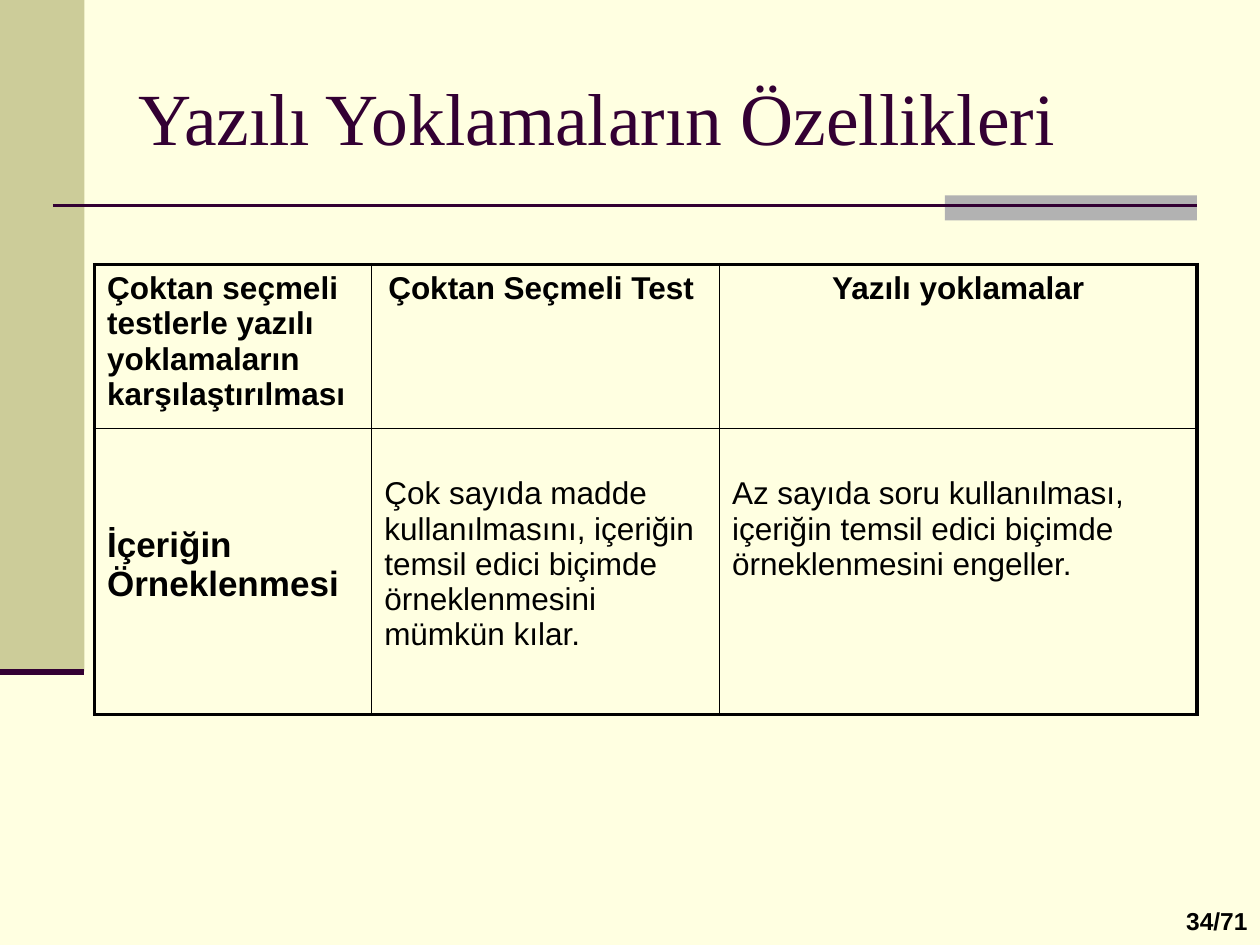
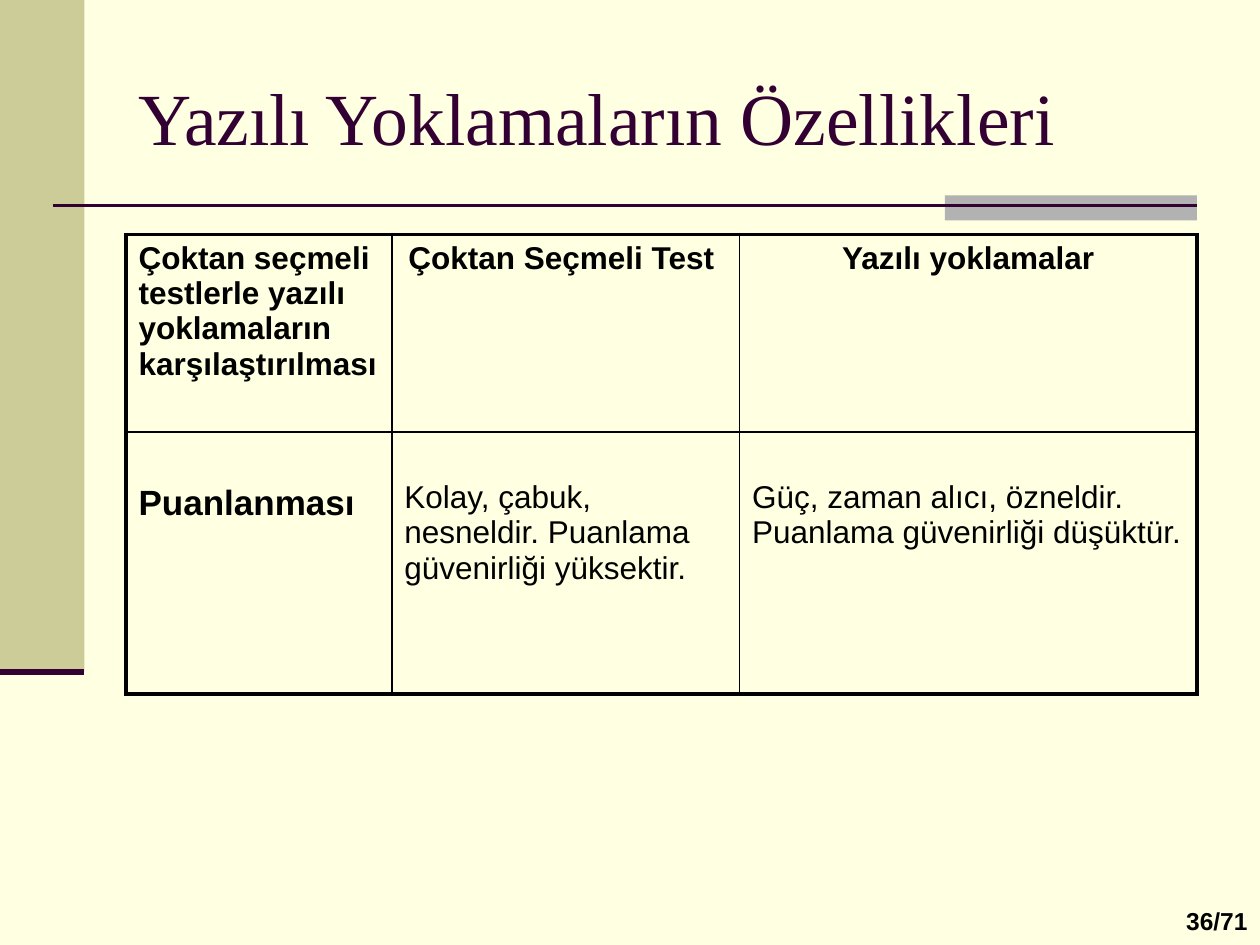
from dataclasses import dataclass

from lxml import etree
from pptx import Presentation
from pptx import util as u
from pptx.dml.color import RGBColor
from pptx.enum import shapes, text
from pptx.oxml import ns


@dataclass(frozen=True)
class Theme:
    background: str = "FFFFE1"
    band: str = "CCCC99"
    accent: str = "B2B2B2"
    plum: str = "330033"
    ink: str = "000000"
    serif: str = "Times New Roman"
    sans: str = "Arial"
    title_size: int = 42
    topic_size: int = 20
    body_size: int = 18
    page_size: int = 14
    outer_border: float = 2.25
    inner_border: float = 1


T = Theme()
TITLE = "Yazılı Yoklamaların Özellikleri"
HEADERS = (
    "Çoktan seçmeli testlerle yazılı yoklamaların karşılaştırılması",
    "Çoktan Seçmeli Test ",
    "Yazılı yoklamalar",
)
PAGE_COUNT = 71
CELL_INSET = 0.05
BODY_DROP = 0.38

SLIDES = (
    dict(
        page=34, box=(0.75, 2.1), cols=(2.2, 2.76, 3.79), rows=(1.22, 2.27),
        topic_drop=0.77,
        entries=(
            "İçeriğin Örneklenmesi",
            "Çok sayıda madde kullanılmasını, içeriğin temsil edici biçimde "
            "örneklenmesini mümkün kılar.",
            "Az sayıda soru kullanılması, içeriğin temsil edici biçimde "
            "örneklenmesini engeller.",
        ),
    ),
    dict(
        page=36, box=(1, 1.86), cols=(2.11, 2.76, 3.63), rows=(1.57, 2.08),
        topic_drop=0.41,
        entries=(
            "Puanlanması",
            "Kolay, çabuk, nesneldir. Puanlama güvenirliği yüksektir.",
            "Güç, zaman alıcı, özneldir. Puanlama güvenirliği düşüktür.",
        ),
    ),
)


def inches(*values):
    return [u.Inches(v) for v in values]


def write(tf, words, size, font=T.sans, color=T.ink, bold=False,
          align=text.PP_ALIGN.LEFT):
    p = tf.paragraphs[0]
    p.alignment = align
    r = p.add_run()
    r.text = words
    r.font.name, r.font.size, r.font.bold = font, u.Pt(size), bold
    r.font.color.rgb = RGBColor.from_string(color)


def add_text(s, box, words, size, anchor=text.MSO_ANCHOR.TOP, **style):
    tf = s.shapes.add_textbox(*inches(*box)).text_frame
    tf.word_wrap = True
    tf.vertical_anchor = anchor
    write(tf, words, size, **style)


def add_block(s, box, color):
    sp = s.shapes.add_shape(shapes.MSO_SHAPE.RECTANGLE, *inches(*box))
    sp.shadow.inherit = False
    sp.fill.solid()
    sp.fill.fore_color.rgb = RGBColor.from_string(color)
    sp.line.fill.background()


def add_rule(s, left, right, y, width):
    cx = s.shapes.add_connector(
        shapes.MSO_CONNECTOR.STRAIGHT, *inches(left, y, right, y))
    cx.line.color.rgb = RGBColor.from_string(T.plum)
    cx.line.width = u.Pt(width)
    etree.SubElement(cx._element.spPr, ns.qn("a:effectLst"))


def add_frame(s):
    """Background, side band and the rules around the title."""
    s.background.fill.solid()
    s.background.fill.fore_color.rgb = RGBColor.from_string(T.background)
    band_width, band_height = 0.67, 5.33
    add_block(s, (0, 0, band_width, band_height), T.band)
    add_block(s, (7.5, 1.55, 2, 0.2), T.accent)
    add_rule(s, 0.42, 9.5, 1.63, 1.5)
    add_rule(s, 0, band_width, band_height, 3.5)


def set_borders(cell, widths):
    """Draw the borders; widths are in points: left, right, top, bottom."""
    tc_pr = cell._tc.get_or_add_tcPr()
    for i, (side, width) in enumerate(zip("LRTB", widths)):
        ln = etree.Element(ns.qn(f"a:ln{side}"), w=str(int(u.Pt(width))))
        fill = etree.SubElement(ln, ns.qn("a:solidFill"))
        etree.SubElement(fill, ns.qn("a:srgbClr"), val=T.ink)
        tc_pr.insert(i, ln)


def add_comparison(s, box, cols, rows, entries, topic_drop):
    """Table of headers over one topic; topic_drop is the topic's top inset."""
    table = s.shapes.add_table(
        len(rows), len(cols), *inches(*box, sum(cols), sum(rows))).table
    table.first_row = table.horz_banding = False
    for column, width in zip(table.columns, cols):
        column.width = u.Inches(width)
    for row, height in zip(table.rows, rows):
        row.height = u.Inches(height)

    last_row, last_col = len(rows) - 1, len(cols) - 1
    for i, line in enumerate((HEADERS, entries)):
        for j, words in enumerate(line):
            cell = table.cell(i, j)
            header, topic = i == 0, i > 0 and j == 0
            drop = CELL_INSET if header else topic_drop if topic else BODY_DROP
            cell.margin_top = u.Inches(drop)
            cell.fill.background()
            on_edge = (j == 0, j == last_col, i == 0, i == last_row)
            set_borders(cell, [T.outer_border if edge else T.inner_border
                               for edge in on_edge])
            centred = header and j > 0
            write(cell.text_frame, words,
                  T.topic_size if topic else T.body_size,
                  bold=header or topic,
                  align=text.PP_ALIGN.CENTER if centred else text.PP_ALIGN.LEFT)


def add_comparison_slide(prs, page, **comparison):
    s = prs.slides.add_slide(prs.slide_layouts[6])
    add_frame(s)
    add_text(s, (1, 0.3, 8.5, 1.25), TITLE, T.title_size,
             anchor=text.MSO_ANCHOR.MIDDLE, font=T.serif, color=T.plum)
    add_comparison(s, **comparison)
    add_text(s, (9.17, 7.14, 0.83, 0.33), f"{page}/{PAGE_COUNT}", T.page_size,
             bold=True, align=text.PP_ALIGN.RIGHT)


def main():
    prs = Presentation()
    prs.slide_width, prs.slide_height = inches(10, 7.5)
    for slide in SLIDES:
        add_comparison_slide(prs, **slide)
    prs.save("out.pptx")


if __name__ == "__main__":
    main()
